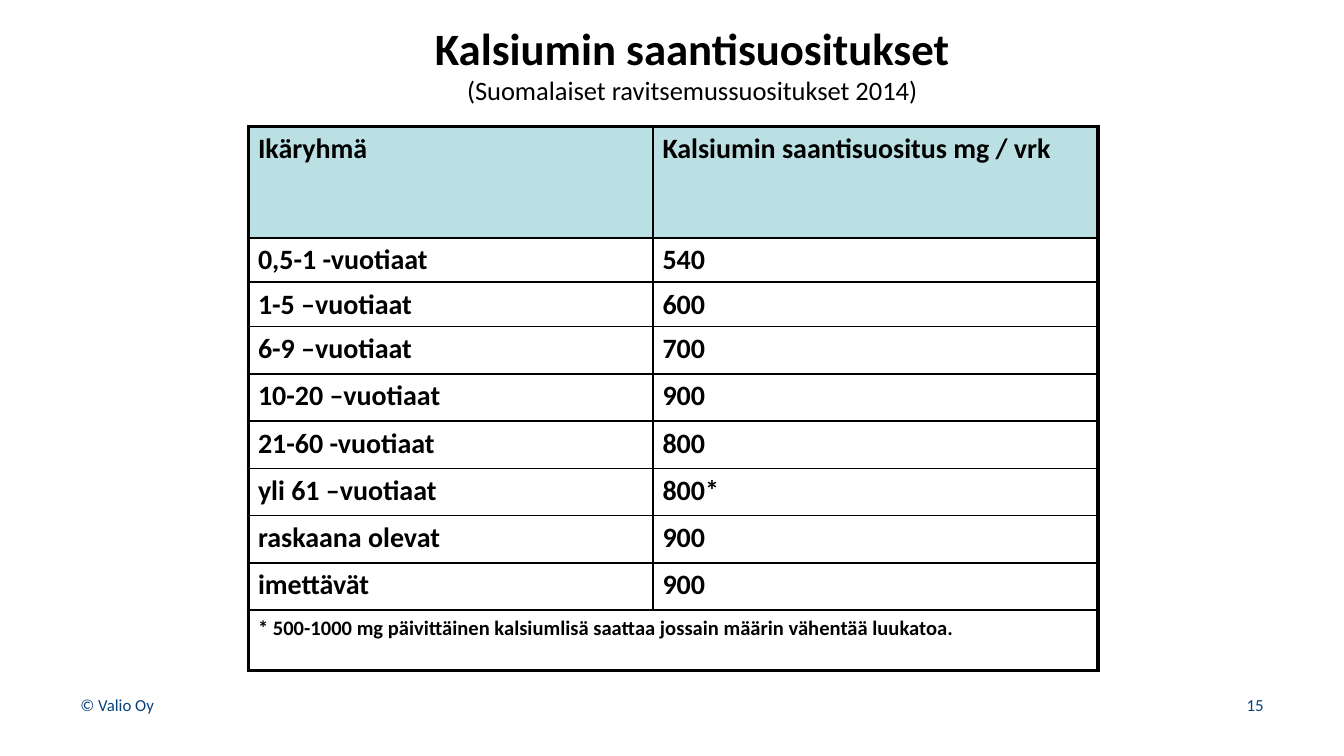
"""Builds the slide on recommended calcium intake by age group."""
from lxml import etree
from pptx import Presentation
from pptx.dml.color import RGBColor
from pptx.enum import text
from pptx.oxml import ns
from pptx.util import Inches, Pt

BLACK = RGBColor(0x00, 0x00, 0x00)
NAVY = RGBColor(0x07, 0x41, 0x7D)
PALE_TEAL = RGBColor(0xBB, 0xE0, 0xE3)

THIN, THICK = 1, 2.25
COLUMN_WIDTHS = (3.01, 3.31)
TABLE_HEIGHT = 4.05
HEADER_HEIGHT, CHILD_HEIGHT, FOOTNOTE_HEIGHT = 0.83, 0.33, 0.45
OLDER_HEIGHT = (TABLE_HEIGHT - HEADER_HEIGHT - 2 * CHILD_HEIGHT - FOOTNOTE_HEIGHT) / 6
ROW_HEIGHTS = (HEADER_HEIGHT,) + (CHILD_HEIGHT,) * 2 + (OLDER_HEIGHT,) * 6 + (FOOTNOTE_HEIGHT,)
INTAKES = (
    ("Ikäryhmä", "Kalsiumin saantisuositus mg / vrk"),
    ("0,5-1 -vuotiaat", "540"),
    ("1-5 –vuotiaat", "600"),
    ("6-9 –vuotiaat", "700"),
    ("10-20 –vuotiaat", "900"),
    ("21-60 -vuotiaat", "800"),
    ("yli 61 –vuotiaat", "800*"),
    ("raskaana olevat", "900"),
    ("imettävät", "900"),
)
FOOTNOTE = "* 500-1000 mg päivittäinen kalsiumlisä saattaa jossain määrin vähentää luukatoa."


def set_attributes(target, values):
    """Set each named value on the target."""
    for name, value in values.items():
        setattr(target, name, value)


def add_run(paragraph, wording, size, color=BLACK, bold=False):
    """Append formatted wording to a paragraph."""
    run = paragraph.add_run()
    run.text = wording
    set_attributes(run.font, {"name": "Calibri", "size": Pt(size), "bold": bold})
    run.font.color.rgb = color


def write_title(slide):
    """Place the heading and its source line in the title placeholder."""
    title = slide.shapes.title
    set_attributes(title, {"left": Inches(1.64), "top": Inches(0),
                           "width": Inches(7.02), "height": Inches(0.94)})
    set_attributes(title.text_frame, {"word_wrap": True,
                                      "auto_size": text.MSO_AUTO_SIZE.NONE,
                                      "vertical_anchor": text.MSO_ANCHOR.MIDDLE})
    heading = title.text_frame.paragraphs[0]
    heading.alignment = text.PP_ALIGN.CENTER
    add_run(heading, "Kalsiumin saantisuositukset", 24, bold=True)
    heading.add_line_break()
    line_break = heading._p.find(ns.qn("a:br"))
    etree.SubElement(line_break, ns.qn("a:rPr"), sz="2400")
    add_run(heading, "(Suomalaiset ravitsemussuositukset 2014)", 14.2)


def add_footer(slide, left, wording, alignment):
    """Add a small line of text at the foot of the slide."""
    footer = slide.shapes.add_textbox(Inches(left), Inches(5.12), Inches(2.33), Inches(0.39))
    footer.text_frame.word_wrap = True
    line = footer.text_frame.paragraphs[0]
    line.alignment = alignment
    add_run(line, wording, 9, NAVY)


def set_borders(cell, widths):
    """Draw the black borders of a cell, given widths by side."""
    properties = cell._tc.get_or_add_tcPr()
    for side, width in widths.items():
        border = etree.SubElement(properties, ns.qn(f"a:ln{side}"), w=str(Pt(width)))
        fill = etree.SubElement(border, ns.qn("a:solidFill"))
        etree.SubElement(fill, ns.qn("a:srgbClr"), val=str(BLACK))


def format_cell(cell, row, column):
    """Set the margins, borders and fill of a cell by its place in the grid."""
    last_row, last_column = len(ROW_HEIGHTS) - 1, len(COLUMN_WIDTHS) - 1
    set_attributes(cell, {"margin_left": Inches(0.07), "margin_right": Inches(0.07),
                          "margin_top": Inches(0.04), "margin_bottom": Inches(0.04)})
    reaches_right = column == last_column or cell.is_merge_origin
    set_borders(cell, {"L": THICK if column == 0 else THIN,
                       "R": THICK if reaches_right else THIN,
                       "T": THICK if row == 0 else THIN,
                       "B": THICK if row == last_row else THIN})
    if row == 0:
        cell.fill.solid()
        cell.fill.fore_color.rgb = PALE_TEAL
    else:
        cell.fill.background()


def add_intake_table(slide):
    """Add the table of intakes with a footnote across its last row."""
    table = slide.shapes.add_table(
        len(ROW_HEIGHTS), len(COLUMN_WIDTHS), Inches(1.85), Inches(0.94),
        Inches(sum(COLUMN_WIDTHS)), Inches(TABLE_HEIGHT)).table
    set_attributes(table, {"first_row": False, "horz_banding": False})
    for column, width in zip(table.columns, COLUMN_WIDTHS):
        column.width = Inches(width)
    for row, height in zip(table.rows, ROW_HEIGHTS):
        row.height = Inches(height)
    footnote = table.cell(len(INTAKES), 0)
    footnote.merge(table.cell(len(INTAKES), 1))
    for row in range(len(ROW_HEIGHTS)):
        for column in range(len(COLUMN_WIDTHS)):
            format_cell(table.cell(row, column), row, column)
    for row, entries in enumerate(INTAKES):
        for column, wording in enumerate(entries):
            entry = table.cell(row, column).text_frame.paragraphs[0]
            add_run(entry, wording, 15, bold=True)
    add_run(footnote.text_frame.paragraphs[0], FOOTNOTE, 11, bold=True)


def main():
    """Build and save the presentation."""
    presentation = Presentation()
    width = Inches(10)
    set_attributes(presentation, {"slide_width": width, "slide_height": width * 9 // 16})
    slide = presentation.slides.add_slide(presentation.slide_layouts[5])
    add_footer(slide, 0.5, "© Valio Oy", text.PP_ALIGN.LEFT)
    add_footer(slide, 7.17, "15", text.PP_ALIGN.RIGHT)
    write_title(slide)
    add_intake_table(slide)
    presentation.save("out.pptx")


if __name__ == "__main__":
    main()
